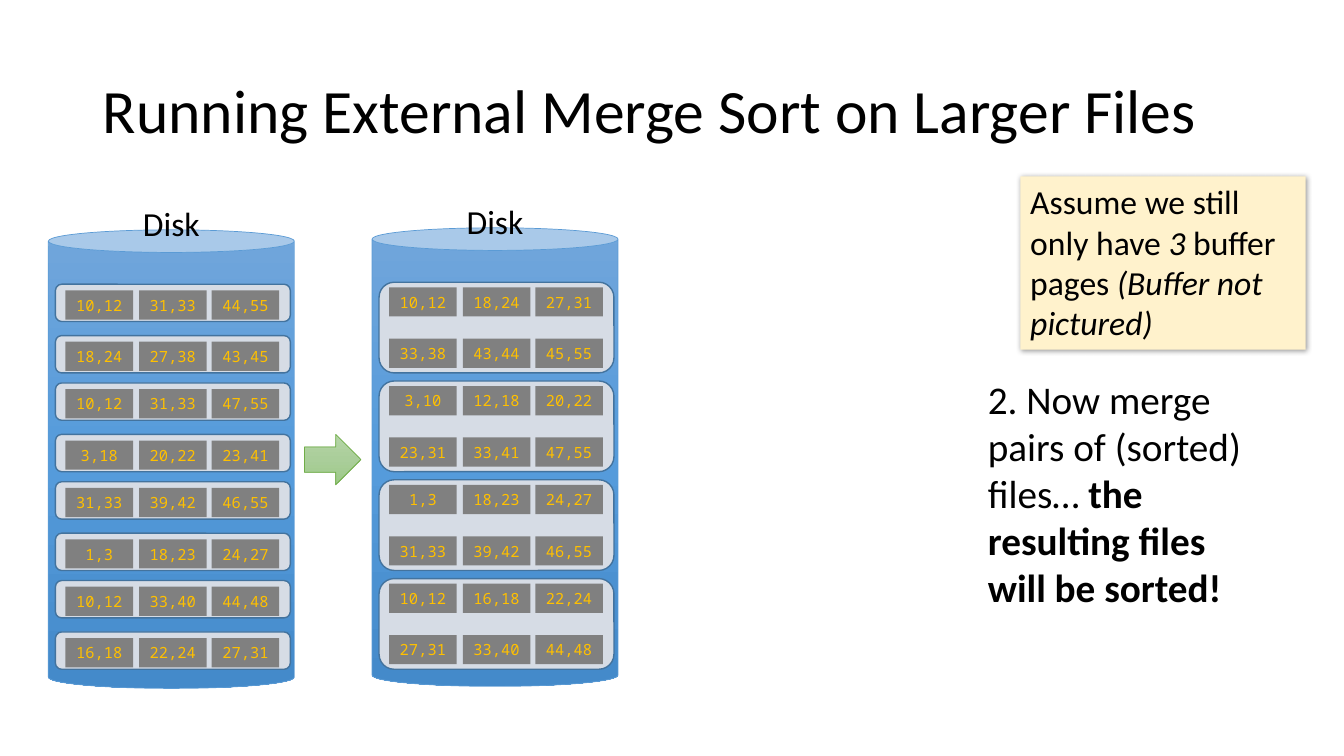
import copy

import lxml.etree
import pptx
import pptx.dml.color
import pptx.enum.shapes
import pptx.enum.text
import pptx.oxml.ns
import pptx.util

PX = 9144
SHAPES = pptx.enum.shapes.MSO_SHAPE
ALIGN = pptx.enum.text.PP_ALIGN
ANCHOR = pptx.enum.text.MSO_ANCHOR

LABEL_FONT = {"name": "Calibri", "size": pptx.util.Pt(24)}
STEP_FONT = {"name": "Calibri", "size": pptx.util.Pt(28)}
TITLE_FONT = {"name": "Calibri", "size": pptx.util.Pt(44)}
PAGE_FONT = {"name": "Noto Sans Mono", "size": pptx.util.Pt(11)}

DISK_GRADIENT = ["71A6DB", "559BDB", "448ACA"]
ARROW_GRADIENT = ["B5D5A7", "AACE9A", "9CC987"]

RUN_PITCH = 98
ROW_OFFSET = 51
PAGE_OFFSETS = [0, 73, 145]

INPUT_PAIRS = [
    ["10,12 31,33 44,55", "18,24 27,38 43,45"],
    ["10,12 31,33 47,55", "3,18 20,22 23,41"],
    ["31,33 39,42 46,55", "1,3 18,23 24,27"],
    ["10,12 33,40 44,48", "16,18 22,24 27,31"],
]
MERGED_RUNS = [
    ["10,12 18,24 27,31", "33,38 43,44 45,55"],
    ["3,10 12,18 20,22", "23,31 33,41 47,55"],
    ["1,3 18,23 24,27", "31,33 39,42 46,55"],
    ["10,12 16,18 22,24", "27,31 33,40 44,48"],
]


def emu(*lengths):
    return [length * PX for length in lengths]


def rgb(value):
    return pptx.dml.color.RGBColor.from_string(value)


def apply_format(target, values):
    for name, value in values.items():
        setattr(target, name, value)


def write_text(shape, runs, font, color="000000", align=ALIGN.LEFT,
               anchor=ANCHOR.TOP, wrap=True):
    apply_format(shape.text_frame, {"word_wrap": wrap, "vertical_anchor": anchor})
    paragraph = shape.text_frame.paragraphs[0]
    paragraph.alignment = align
    for text, emphasis in runs:
        run = paragraph.add_run()
        run.text = text
        apply_format(run.font, font | emphasis)
        run.font.color.rgb = rgb(color)
    return paragraph


def add_text(slide, box, runs, font, align=ALIGN.LEFT):
    write_text(slide.shapes.add_textbox(*emu(*box)), runs, font, align=align)


def add_box(slide, kind, box, fill=None, line=None, width=1):
    shape = slide.shapes.add_shape(kind, *emu(*box))
    shape.shadow.inherit = False
    if fill:
        shape.fill.solid()
        shape.fill.fore_color.rgb = rgb(fill)
    if line:
        shape.line.color.rgb = rgb(line)
        shape.line.width = pptx.util.Pt(width)
    else:
        shape.line.fill.background()
    return shape


def set_gradient(shape, colors):
    shape.fill.gradient()
    shape.fill.gradient_angle = 270
    stops = shape._element.spPr.find(".//" + pptx.oxml.ns.qn("a:gsLst"))
    stops.insert(1, copy.deepcopy(stops[0]))
    for index, (stop, color) in enumerate(zip(shape.fill.gradient_stops, colors)):
        stop.position = index / 2
        stop.color.rgb = rgb(color)


def add_shadow(shape):
    effects = shape._element.spPr.find(pptx.oxml.ns.qn("a:effectLst"))
    shadow = lxml.etree.SubElement(
        effects, pptx.oxml.ns.qn("a:outerShdw"),
        blurRad="50800", dist="12700", dir="2700000", algn="tl", rotWithShape="0")
    color = lxml.etree.SubElement(shadow, pptx.oxml.ns.qn("a:srgbClr"), val="000000")
    lxml.etree.SubElement(color, pptx.oxml.ns.qn("a:alpha"), val="40000")


def add_disk(slide, left, top):
    disk = add_box(slide, SHAPES.CAN, (left, top, 244, 455), line="5B9BD5", width=0.5)
    disk.adjustments[0] = 0.092
    set_gradient(disk, DISK_GRADIENT)
    add_text(slide, (left + 72, top - 32, 100, 50), [("Disk", {})],
             LABEL_FONT, ALIGN.CENTER)


def add_frame(slide, left, top, height):
    add_box(slide, SHAPES.ROUNDED_RECTANGLE, (left, top, 233, height),
            "D6DCE5", "43739E")


def add_pages(slide, left, top, row):
    for offset, values in zip(PAGE_OFFSETS, row.split()):
        page = add_box(slide, SHAPES.RECTANGLE, (left + offset, top, 67, 29), "808080")
        write_text(page, [(values, {})], PAGE_FONT, "FFC000",
                   ALIGN.CENTER, ANCHOR.MIDDLE, False)


def add_input_files(slide, left, top):
    for pair_index, pair in enumerate(INPUT_PAIRS):
        for row_index, row in enumerate(pair):
            row_top = top + pair_index * RUN_PITCH + row_index * ROW_OFFSET
            add_frame(slide, left, row_top, 37)
            add_pages(slide, left + 10, row_top + 6, row)


def add_merged_files(slide, left, top):
    for run_index, rows in enumerate(MERGED_RUNS):
        run_top = top + run_index * RUN_PITCH
        add_frame(slide, left, run_top, 90)
        for row_index, row in enumerate(rows):
            add_pages(slide, left + 10, run_top + 5 + row_index * ROW_OFFSET, row)


def add_title(slide, text):
    title = slide.shapes.title
    box = dict(zip(("left", "top", "width", "height"), emu(92, 40, 1150, 145)))
    apply_format(title, box)
    paragraph = write_text(title, [(text, {})], TITLE_FONT, anchor=ANCHOR.MIDDLE)
    paragraph.line_spacing = 0.9


def add_callout(slide, box, runs):
    callout = add_box(slide, SHAPES.RECTANGLE, box, "FFF2CC")
    add_shadow(callout)
    write_text(callout, runs, LABEL_FONT)


def main():
    presentation = pptx.Presentation()
    apply_format(presentation, dict(zip(("slide_width", "slide_height"), emu(1333, 750))))
    slide = presentation.slides.add_slide(presentation.slide_layouts[5])
    add_title(slide, "Running External Merge Sort on Larger Files")
    add_disk(slide, 48, 228)
    add_input_files(slide, 55, 282)
    add_disk(slide, 369, 226)
    add_merged_files(slide, 376, 280)
    arrow = add_box(slide, SHAPES.RIGHT_ARROW, (302, 431, 56, 50),
                    line="70AD47", width=0.5)
    set_gradient(arrow, ARROW_GRADIENT)
    add_text(slide, (970, 367, 284, 246), [
        ("2. Now merge pairs of (sorted) files… ", {}),
        ("the resulting files will be sorted!", {"bold": True}),
    ], STEP_FONT)
    add_callout(slide, (1012, 175, 283, 172), [
        ("Assume we still only have ", {}),
        ("3", {"italic": True}),
        (" buffer pages ", {}),
        ("(Buffer not pictured)", {"italic": True}),
    ])
    presentation.save("out.pptx")


if __name__ == "__main__":
    main()
